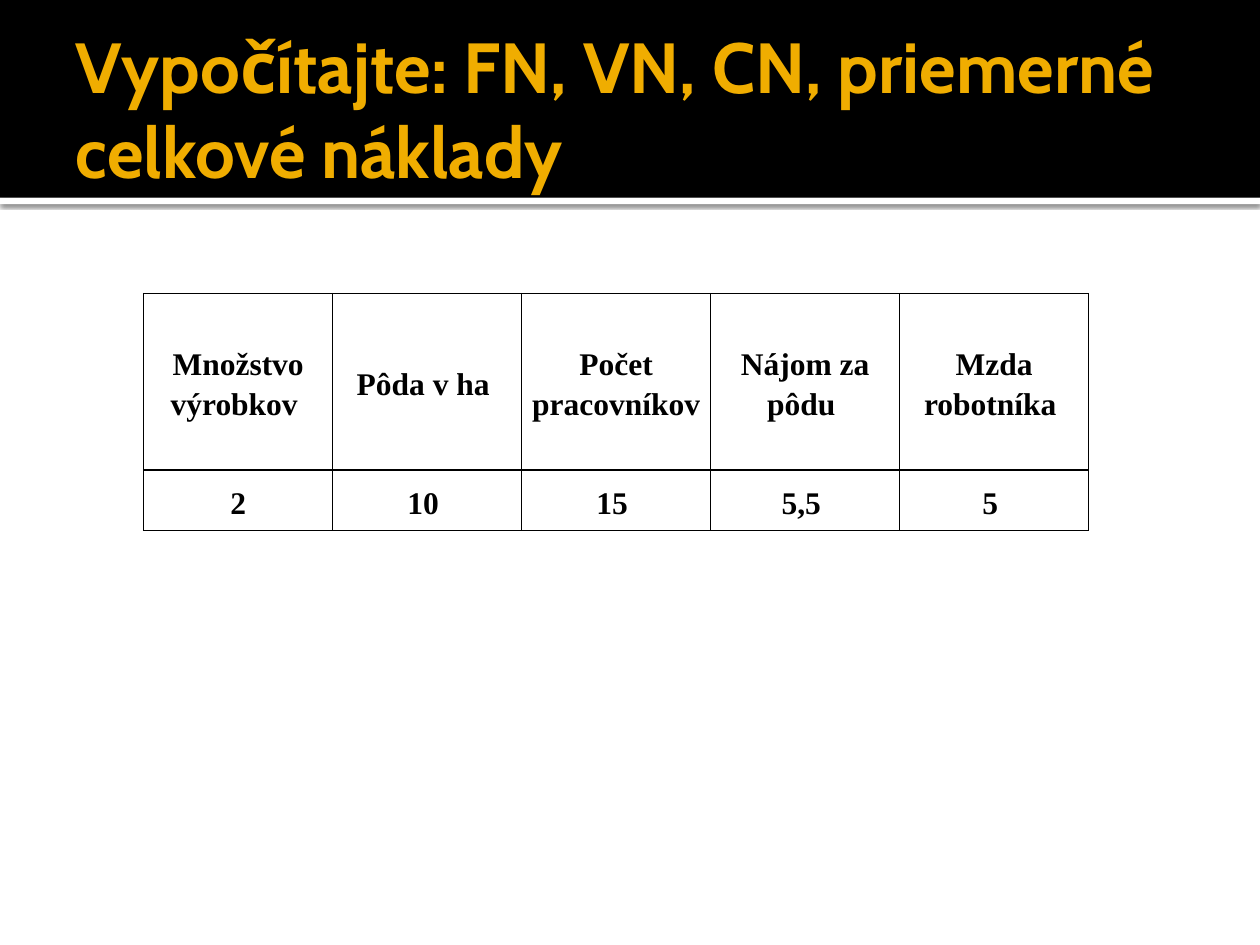
from typing import NamedTuple

from lxml import etree
from pptx import Presentation
from pptx.dml.color import RGBColor
from pptx.enum.shapes import MSO_SHAPE
from pptx.enum.text import MSO_ANCHOR, MSO_AUTO_SIZE, PP_ALIGN
from pptx.oxml import parse_xml
from pptx.oxml.ns import nsdecls, qn
from pptx.util import Emu, Inches, Pt

RECT = MSO_SHAPE.RECTANGLE
MIDDLE = MSO_ANCHOR.MIDDLE
CENTER, LEFT = PP_ALIGN.CENTER, PP_ALIGN.LEFT
TITLE_ONLY = 5

COLORS = {"band": "000000", "strip": "FFFFFF", "title": "F0AD00", "text": "000000", "border": "000000"}
BAND_H, STRIP_H = 1.57, 0.05
COL_W = 1.5
ROW_H = (1.4, 0.48)
ROWS = (
    ("Množstvo výrobkov ", "Pôda v ha ", "Počet pracovníkov ", "Nájom za pôdu ", "Mzda robotníka "),
    ("2", "10 ", "15 ", "5,5 ", "5 "),
)


class Band(NamedTuple):
    top: float
    height: float
    color: str
    shadow: bool


BANDS = (Band(BAND_H, STRIP_H, "strip", True), Band(0, BAND_H, "band", False))


def rgb(name: str) -> RGBColor:
    return RGBColor.from_string(COLORS[name])


def add_band(slide, width: Emu, band: Band) -> None:
    sp = slide.shapes.add_shape(RECT, 0, Inches(band.top), width, Inches(band.height))
    sp.shadow.inherit = False
    sp.fill.solid()
    sp.fill.fore_color.rgb = rgb(band.color)
    sp.line.fill.background()
    if band.shadow:
        effects = sp._element.spPr.find(qn("a:effectLst"))
        effects.append(parse_xml(
            f'<a:outerShdw {nsdecls("a")} blurRad="{Pt(2.5)}" dist="{Pt(0.8)}" dir="5400000" '
            'algn="tl" rotWithShape="0"><a:srgbClr val="000000"><a:alpha val="60000"/>'
            '</a:srgbClr></a:outerShdw>'))


def format_title(slide, text: str) -> None:
    title = slide.shapes.title
    title.left, title.top = Inches(0.5), Inches(0.17)
    title.width, title.height = Inches(9), Inches(1.37)
    tf = title.text_frame
    tf.text = text
    tf.word_wrap = True
    tf.auto_size = MSO_AUTO_SIZE.NONE
    tf.vertical_anchor = MIDDLE
    tf.margin_left = Inches(0.1)
    tf.margin_right = tf.margin_top = tf.margin_bottom = Inches(0.05)
    p = tf.paragraphs[0]
    p.alignment = LEFT
    p.font.name, p.font.size, p.font.bold = "Cabin", Pt(40.5), True
    p.font.color.rgb = rgb("title")
    # The title lies in front of the bands
    slide.shapes._spTree.append(title._element)


def set_borders(cell) -> None:
    tc_pr = cell._tc.get_or_add_tcPr()
    for i, side in enumerate(("lnL", "lnR", "lnT", "lnB")):
        ln = etree.Element(qn(f"a:{side}"), w=str(Pt(1)))
        fill = etree.SubElement(ln, qn("a:solidFill"))
        etree.SubElement(fill, qn("a:srgbClr"), val=COLORS["border"])
        tc_pr.insert(i, ln)


def format_cell(cell, text: str) -> None:
    cell.fill.background()
    set_borders(cell)
    cell.vertical_anchor = MIDDLE
    cell.margin_left = cell.margin_right = Inches(0.07)
    cell.margin_top, cell.margin_bottom = Inches(0.01), 0
    cell.text = text
    p = cell.text_frame.paragraphs[0]
    p.alignment, p.line_spacing = CENTER, 1.15
    p.font.name, p.font.size, p.font.bold = "Times New Roman", Pt(18), True
    p.font.color.rgb = rgb("text")


def add_cost_table(slide) -> None:
    n_cols = len(ROWS[0])
    table = slide.shapes.add_table(
        len(ROWS), n_cols, Inches(1.14), Inches(2.33),
        Inches(COL_W * n_cols), Inches(sum(ROW_H))).table
    table.first_row = table.horz_banding = False
    for col in table.columns:
        col.width = Inches(COL_W)
    for r, (height, texts) in enumerate(zip(ROW_H, ROWS)):
        table.rows[r].height = Inches(height)
        for c, text in enumerate(texts):
            format_cell(table.cell(r, c), text)


def main() -> None:
    prs = Presentation()
    prs.slide_width, prs.slide_height = Inches(10), Inches(7.5)
    slide = prs.slides.add_slide(prs.slide_layouts[TITLE_ONLY])
    for band in BANDS:
        add_band(slide, prs.slide_width, band)
    format_title(slide, "Vypočítajte: FN, VN, CN, priemerné celkové náklady")
    add_cost_table(slide)
    prs.save("out.pptx")


if __name__ == "__main__":
    main()
